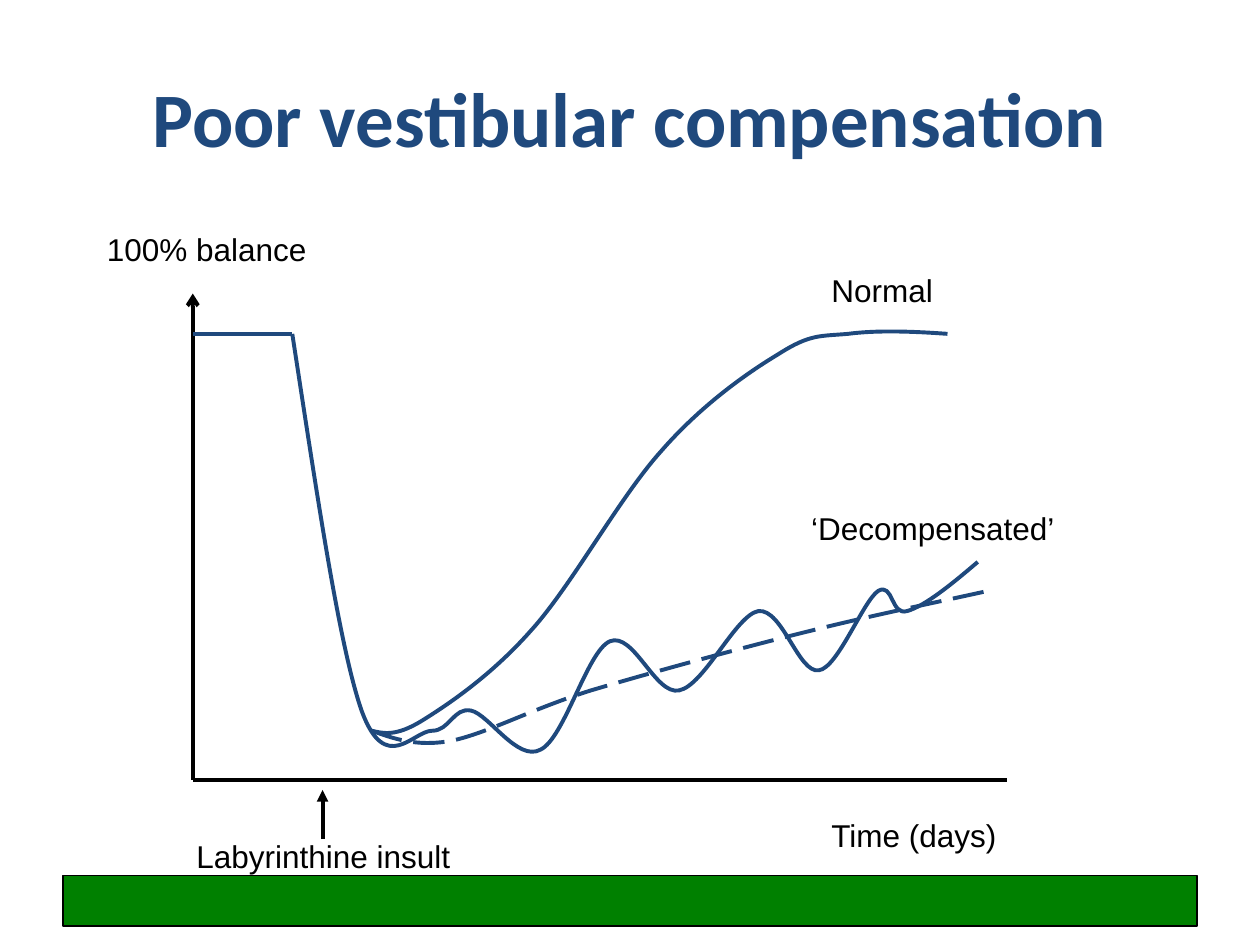
"""Builds a slide that plots normal and poor vestibular compensation over time."""
from pptx import Presentation
from pptx.dml.color import RGBColor
from pptx.enum.dml import MSO_LINE
from pptx.enum.shapes import MSO_CONNECTOR, MSO_SHAPE
from pptx.enum.text import MSO_ANCHOR, MSO_AUTO_SIZE, PP_ALIGN
from pptx.oxml.ns import qn
from pptx.oxml.xmlchemy import OxmlElement
from pptx.util import Inches, Pt

STRAIGHT = MSO_CONNECTOR.STRAIGHT
RECTANGLE = MSO_SHAPE.RECTANGLE
LONG_DASH = MSO_LINE.LONG_DASH
MIDDLE = MSO_ANCHOR.MIDDLE
FIT_SHAPE = MSO_AUTO_SIZE.SHAPE_TO_FIT_TEXT
CENTER = PP_ALIGN.CENTER

BLACK, NAVY, GREEN = "000000", "1F497D", "008000"

ORIGIN_X, ORIGIN_Y = 1.53, 6.19
FULL_BALANCE_Y, INSULT_X = 2.65, 2.32

LABELS = [
    ("100% balance", 0.75, 1.78, 2.76),
    ("Time (days)", 6.5, 6.43, 2.28),
    ("Labyrinthine insult", 1.46, 6.59, 3.07),
    ("‘Decompensated’", 6.34, 3.99, 3.07),
    ("Normal", 6.5, 2.1, 1.73),
]

DECOMPENSATED = [
    (INSULT_X, FULL_BALANCE_Y),
    (2.51, 3.88), (2.69, 5.12), (2.87, 5.64),
    (3.06, 6.16), (3.28, 5.8), (3.43, 5.8),
    (3.57, 5.8), (3.6, 5.61), (3.74, 5.64),
    (3.88, 5.67), (4.11, 6.05), (4.29, 5.95),
    (4.48, 5.86), (4.66, 5.17), (4.84, 5.09),
    (5.03, 5.01), (5.2, 5.52), (5.39, 5.48),
    (5.59, 5.44), (5.84, 4.88), (6.02, 4.85),
    (6.21, 4.83), (6.34, 5.35), (6.5, 5.32),
    (6.65, 5.3), (6.85, 4.77), (6.97, 4.69),
    (7.09, 4.62), (7.07, 4.89), (7.2, 4.85),
    (7.34, 4.81), (7.55, 4.64), (7.76, 4.46),
]
TREND = [
    (2.95, 5.8),
    (3.12, 5.86), (3.3, 5.93), (3.58, 5.88),
    (3.87, 5.82), (4.21, 5.63), (4.69, 5.48),
    (5.16, 5.34), (5.89, 5.14), (6.42, 5.01),
    (6.94, 4.88), (7.39, 4.79), (7.84, 4.69),
]
NORMAL = [
    (2.95, 5.8),
    (3.04, 5.82), (3.14, 5.85), (3.35, 5.72),
    (3.56, 5.59), (3.9, 5.36), (4.21, 5.01),
    (4.53, 4.66), (4.91, 3.96), (5.24, 3.59),
    (5.56, 3.22), (5.93, 2.96), (6.18, 2.81),
    (6.43, 2.65), (6.51, 2.67), (6.73, 2.65),
    (6.96, 2.62), (7.24, 2.63), (7.52, 2.65),
]


def rgb(value):
    return RGBColor.from_string(value)


class SlideBuilder:
    def __init__(self, slide):
        self.slide = slide
        self.shapes = slide.shapes
        self.stroke = Pt(2.25)

    def add_text(self, frame, text, font, size, color, bold=False):
        run = frame.paragraphs[0].add_run()
        run.text = text
        run.font.name = font
        run.font.size = Pt(size)
        run.font.bold = bold
        run.font.color.rgb = rgb(color)

    def title(self, text):
        heading = self.shapes.title
        heading.left, heading.top = Inches(0.5), Inches(0.3)
        heading.width, heading.height = Inches(9), Inches(1.25)
        heading.text_frame.vertical_anchor = MIDDLE
        heading.text_frame.paragraphs[0].alignment = CENTER
        self.add_text(heading.text_frame, text, "Calibri", 44, NAVY, bold=True)

    def band(self, left, top, width, height):
        band = self.shapes.add_shape(
            RECTANGLE, Inches(left), Inches(top), Inches(width), Inches(height))
        band.shadow.inherit = False
        band.fill.solid()
        band.fill.fore_color.rgb = rgb(GREEN)
        band.line.color.rgb = rgb(BLACK)
        band.line.width = Pt(0.75)

    def label(self, text, left, top, width):
        label = self.shapes.add_textbox(
            Inches(left), Inches(top), Inches(width), Inches(0.5))
        label.text_frame.word_wrap = True
        label.text_frame.auto_size = FIT_SHAPE
        self.add_text(label.text_frame, text, "Arial", 18, BLACK)

    def line(self, start, end, color=BLACK, arrow=None):
        line = self.shapes.add_connector(
            STRAIGHT, *(Inches(value) for value in (*start, *end)))
        line.line.color.rgb = rgb(color)
        line.line.width = self.stroke
        properties = line._element.spPr
        if arrow:
            arrowhead = OxmlElement("a:tailEnd")
            arrowhead.set("type", arrow)
            properties.find(qn("a:ln")).append(arrowhead)
        properties.append(OxmlElement("a:effectLst"))

    def curve(self, points, dash=None):
        start, *controls = [(Inches(x), Inches(y)) for x, y in points]
        builder = self.shapes.build_freeform(*start)
        builder.add_line_segments(controls, close=False)
        curve = builder.convert_to_shape()
        segments = list(curve._element.iter(qn("a:lnTo")))
        for first in range(0, len(segments), 3):
            bezier = OxmlElement("a:cubicBezTo")
            segments[first].addprevious(bezier)
            for segment in segments[first:first + 3]:
                bezier.append(segment[0])
                segment.getparent().remove(segment)
        curve.shadow.inherit = False
        curve.fill.background()
        curve.line.color.rgb = rgb(NAVY)
        curve.line.width = self.stroke
        if dash:
            curve.line.dash_style = dash


def main():
    deck = Presentation()
    deck.slide_width, deck.slide_height = Inches(10), Inches(7.5)
    builder = SlideBuilder(deck.slides.add_slide(deck.slide_layouts[5]))

    builder.band(0.5, 6.95, 9, 0.4)
    builder.title("Poor vestibular compensation")
    builder.line((ORIGIN_X, ORIGIN_Y), (ORIGIN_X, 2.33), arrow="arrow")
    builder.line((ORIGIN_X, ORIGIN_Y), (7.99, ORIGIN_Y))
    builder.line((ORIGIN_X, FULL_BALANCE_Y), (INSULT_X, FULL_BALANCE_Y), NAVY)
    builder.line((2.56, 6.66), (2.56, 6.27), arrow="triangle")
    builder.curve(DECOMPENSATED)
    builder.curve(TREND, LONG_DASH)
    builder.curve(NORMAL)
    for label in LABELS:
        builder.label(*label)

    deck.save("out.pptx")


if __name__ == "__main__":
    main()
